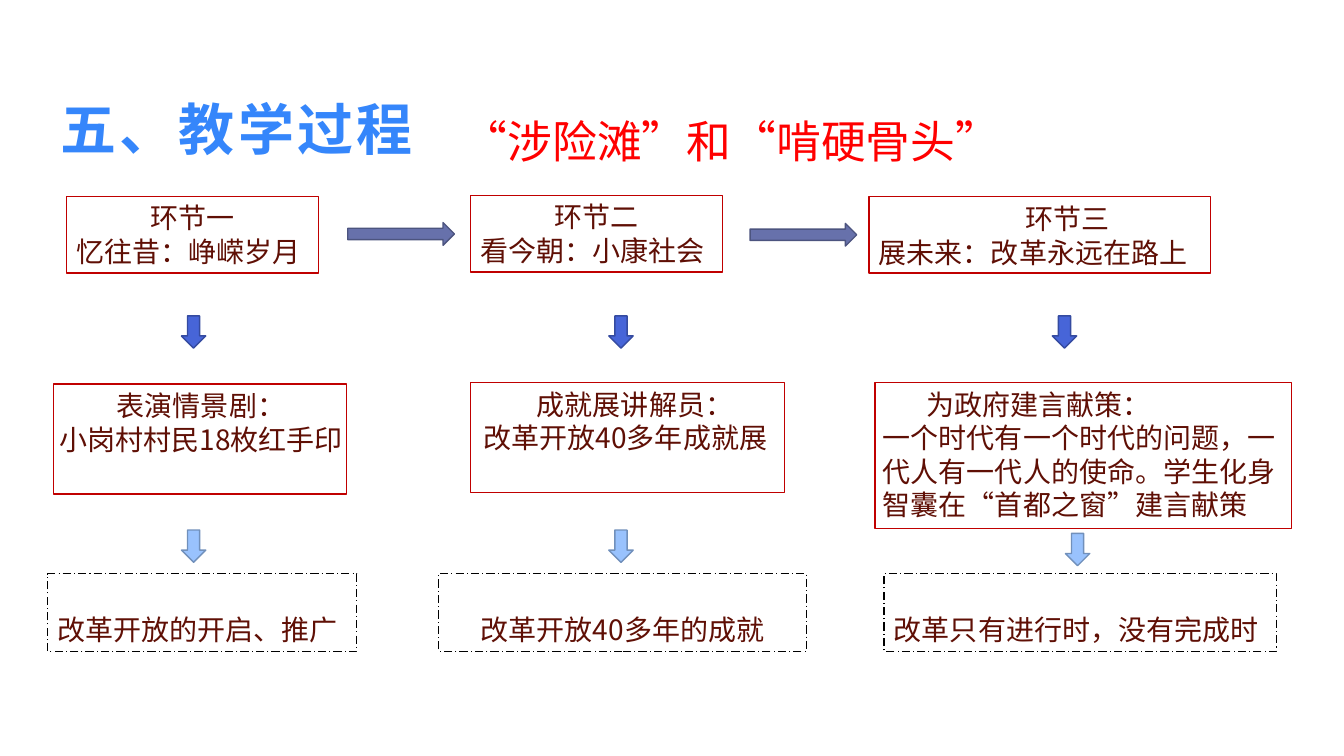
from collections import namedtuple

from pptx import Presentation, util as u
from pptx.dml.color import RGBColor
from pptx.enum import dml, shapes, text

COLUMNS, ROWS = 160, 90
FONT = "Noto Sans CJK SC"
BROWN, RED, BLACK = "5F0F05", "C00000", "000000"
LEFT, CENTER = text.PP_ALIGN.LEFT, text.PP_ALIGN.CENTER

Box = namedtuple("Box", "left top width height")
Line = namedtuple("Line", "words align indent", defaults=(LEFT, 0))
Card = namedtuple("Card", "frame words lines")
Stage = namedtuple("Stage", "left step activity outcome arrow pale_arrow")

STAGES = [
    Stage(
        5.64,
        Card(Box(2.28, 23.4, 30, 9.1), Box(2.28, 23.3, 30, 9.2),
             [Line("环节一", CENTER), Line("忆往昔：峥嵘岁月")]),
        Card(Box(0.72, 45.7, 34.9, 13.1), Box(-3.36, 45.7, 43.3, 13.3),
             [Line("表演情景剧：", CENTER), Line("小岗村村民18枚红手印", CENTER)]),
        Card(Box(0, 68.3, 36.84, 9.24), None, [Line("改革开放的开启、推广")]),
        (15.96, 37.6), (15.96, 63.1)),
    Stage(
        52.2,
        Card(Box(3.84, 23.3, 30, 9.1), Box(3.84, 23.2, 30, 9.2),
             [Line("环节二", CENTER), Line("看今朝：小康社会")]),
        Card(Box(3.84, 45.5, 37.4, 13.1), Box(1.8, 45.5, 40.9, 13.3),
             [Line("成就展讲解员：", CENTER, 2.3), Line("改革开放40多年成就展", CENTER)]),
        Card(Box(0, 68.3, 43.8, 9.24), None, [Line("改革开放40多年的成就", CENTER)]),
        (20.28, 37.6), (20.28, 63.1)),
    Stage(
        103.44,
        Card(Box(0, 23.4, 40.7, 9.1), Box(0, 23.4, 47.4, 9.2),
             [Line("环节三", CENTER), Line("展未来：改革永远在路上")]),
        Card(Box(0.72, 45.5, 49.6, 17.4), Box(0.48, 45.5, 50.3, 21.4),
             [Line("为政府建言献策：", LEFT, 5.2),
              Line("一个时代有一个时代的问题，一代人有一代人的使命。"
                   "学生化身智囊在“首都之窗”建言献策")]),
        Card(Box(1.8, 68.3, 46.7, 9.24), None, [Line("改革只有进行时，没有完成时")]),
        (21.84, 37.6), (23.4, 63.5)),
]


def color(value):
    return RGBColor.from_string(value)


def cells(count):
    return u.Inches(count * 40 / 3 / COLUMNS)


def place(box):
    return [cells(length) for length in box]


def shift(box, left):
    return box._replace(left=box.left + left)


def add_run(paragraph, words, size, hue):
    run = paragraph.add_run()
    run.text = words
    run.font.name = FONT
    run.font.size = u.Pt(size)
    run.font.color.rgb = color(hue)
    properties = run._r.get_or_add_rPr()
    east_asian = properties.makeelement(
        "{http://schemas.openxmlformats.org/drawingml/2006/main}ea", {"typeface": FONT})
    properties.find("{*}latin").addnext(east_asian)
    return run


def write(frame, lines, size=20, hue=BROWN):
    frame.word_wrap = True
    for index, line in enumerate(lines):
        paragraph = frame.add_paragraph() if index else frame.paragraphs[0]
        paragraph.alignment = line.align
        paragraph.line_spacing = u.Pt(size * 1.2)
        if line.indent:
            properties = paragraph._p.get_or_add_pPr()
            properties.set("marL", str(cells(line.indent)))
            properties.set("indent", "0")
        add_run(paragraph, line.words, size, hue)


def add_block(slide, kind, box, outline, fill=None, weight=1):
    shape = slide.shapes.add_shape(kind, *place(box))
    shape.shadow.inherit = False
    if fill:
        shape.fill.solid()
        shape.fill.fore_color.rgb = color(fill)
    else:
        shape.fill.background()
    shape.line.color.rgb = color(outline)
    shape.line.width = u.Pt(weight)
    return shape


def add_heading(slide, box):
    title = slide.shapes.title
    title.left, title.top, title.width, title.height = place(box)
    frame = title.text_frame
    frame.auto_size = text.MSO_AUTO_SIZE.NONE
    frame.vertical_anchor = text.MSO_ANCHOR.MIDDLE
    frame.margin_left = frame.margin_right = u.Inches(0.07)
    frame.margin_top = frame.margin_bottom = u.Inches(0.03)
    paragraph = frame.paragraphs[0]
    paragraph.alignment = LEFT
    paragraph.line_spacing = 1.0
    run = add_run(paragraph, "五、教学过程", 40, "3586FB")
    run.font.bold = True
    run._r.get_or_add_rPr().set("spc", "240")


def add_theme(slide, box):
    theme = slide.shapes.add_textbox(*place(box))
    write(theme.text_frame, [Line("“涉险滩”和“啃硬骨头”")], 32, "FF0000")


def add_card(slide, card, left):
    words = slide.shapes.add_textbox(*place(shift(card.words, left)))
    write(words.text_frame, card.lines)
    add_block(slide, shapes.MSO_SHAPE.RECTANGLE, shift(card.frame, left), RED)


def add_outcome(slide, card, left):
    outcome = add_block(slide, shapes.MSO_SHAPE.RECTANGLE, shift(card.frame, left), BLACK, weight=0.75)
    outcome.line.dash_style = dml.MSO_LINE.LONG_DASH_DOT
    outcome.text_frame.vertical_anchor = text.MSO_ANCHOR.BOTTOM
    write(outcome.text_frame, card.lines)


def add_stage(slide, stage):
    add_card(slide, stage.step, stage.left)
    add_card(slide, stage.activity, stage.left)
    add_outcome(slide, stage.outcome, stage.left)
    for (left, top), fill, outline in (
            (stage.arrow, "4765D8", "354BA0"), (stage.pale_arrow, "99C2FD", "7190BB")):
        box = Box(stage.left + left, top, 2.9, 3.84)
        add_block(slide, shapes.MSO_SHAPE.DOWN_ARROW, box, outline, fill)


def main():
    presentation = Presentation()
    presentation.slide_width = cells(COLUMNS)
    presentation.slide_height = cells(ROWS)
    slide = presentation.slides.add_slide(presentation.slide_layouts[5])
    add_heading(slide, Box(6.36, 11.2, 144, 8))
    add_theme(slide, Box(53.9, 12.9, 73, 7.7))
    for stage in STAGES:
        add_stage(slide, stage)
    for left, top in ((41.4, 26.5), (89.3, 26.6)):
        add_block(slide, shapes.MSO_SHAPE.RIGHT_ARROW, Box(left, top, 12.7, 2.7), "4C547F", "6771AB")
    presentation.save("out.pptx")


if __name__ == "__main__":
    main()
